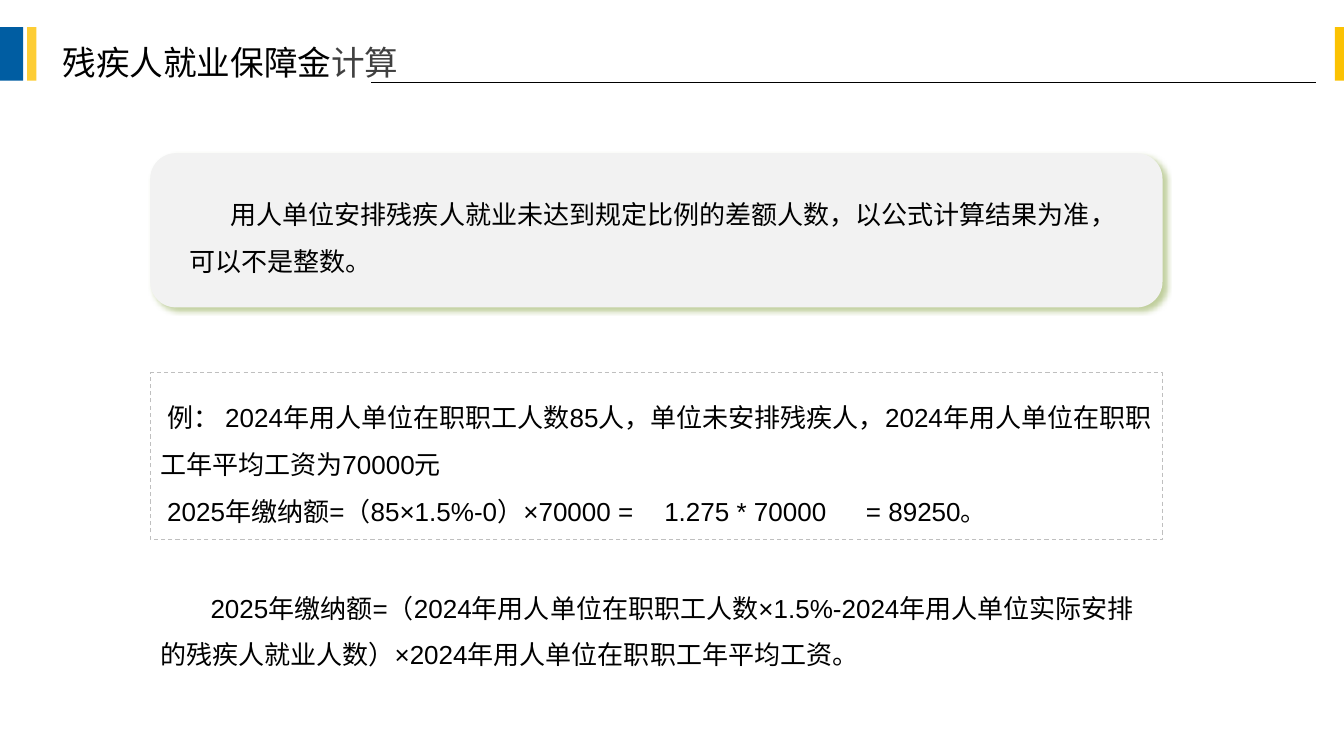
from lxml.etree import SubElement
from pptx import Presentation
from pptx.dml.color import RGBColor
from pptx.enum.dml import MSO_LINE
from pptx.enum.shapes import MSO_CONNECTOR, MSO_SHAPE
from pptx.enum.text import MSO_ANCHOR, MSO_AUTO_SIZE, PP_ALIGN
from pptx.oxml.ns import qn
from pptx.util import Inches, Pt

WIDTH, HEIGHT = 13.33, 7.5
COLUMN_LEFT, COLUMN_WIDTH = 1.49, 10.04
BODY_SIZE = 18.6


def color(hex_text):
    """Turn a hex string into a colour."""
    return RGBColor.from_string(hex_text)


def add_panel(slide, kind, box, fill=None):
    """Add a preset shape without outline or shadow."""
    shape = slide.shapes.add_shape(kind, *map(Inches, box))
    shape.shadow.inherit = False
    shape.line.fill.background()
    if fill:
        shape.fill.solid()
        shape.fill.fore_color.rgb = color(fill)
    else:
        shape.fill.background()
    return shape


def add_run(paragraph, text, size, hex_text="000000"):
    """Append one formatted run."""
    run = paragraph.add_run()
    run.text = text
    run.font.name = "Arial"
    run.font.size = Pt(size)
    run.font.color.rgb = color(hex_text)


def write_body(shape, texts, indent, anchor=MSO_ANCHOR.TOP):
    """Write paragraphs with a first-line indent at one and a half spacing."""
    frame = shape.text_frame
    frame.word_wrap = True
    frame.vertical_anchor = anchor
    for index, text in enumerate(texts):
        paragraph = frame.add_paragraph() if index else frame.paragraphs[0]
        paragraph.alignment = PP_ALIGN.LEFT
        paragraph.line_spacing = 1.5
        properties = paragraph._p.get_or_add_pPr()
        properties.set("marL", "0")
        properties.set("indent", str(Inches(indent)))
        add_run(paragraph, text, BODY_SIZE)


def add_tab_stops(paragraph, positions):
    """Set left tab stops at the given inches."""
    tabs = SubElement(paragraph._p.get_or_add_pPr(), qn("a:tabLst"))
    for position in positions:
        SubElement(tabs, qn("a:tab"), pos=str(Inches(position)), algn="l")


def add_soft_shadow(shape, hex_text):
    """Give a shape a soft shadow to the lower right."""
    effects = shape._element.spPr.find(qn("a:effectLst"))
    shadow = SubElement(effects, qn("a:outerShdw"), blurRad=str(Pt(4)),
                        dist=str(Pt(3)), dir="2700000", algn="tl", rotWithShape="0")
    tint = SubElement(shadow, qn("a:srgbClr"), val=hex_text)
    SubElement(tint, qn("a:alpha"), val="40000")


def add_header(slide, top, height):
    """Place the rule, the edge bars and the title."""
    rule_y = top + height + 0.02
    rule = slide.shapes.add_connector(
        MSO_CONNECTOR.STRAIGHT, *map(Inches, (13.05, rule_y, 3.68, rule_y)))
    rule.line.color.rgb = color("000000")
    rule.line.width = Pt(0.75)
    SubElement(rule._element.spPr, qn("a:effectLst"))
    bars = [(0, 0.23, "005DA2"), (0.27, 0.09, "FDCD35"), (WIDTH - 0.09, 0.09, "FBC203")]
    for left, width, fill in bars:
        add_panel(slide, MSO_SHAPE.RECTANGLE, (left, top, width, height), fill)

    title = slide.shapes.title
    title.left, title.top, title.width, title.height = map(
        Inches, (0.52, top + 0.1, 4.04, 0.5))
    frame = title.text_frame
    frame.word_wrap = True
    frame.auto_size = MSO_AUTO_SIZE.SHAPE_TO_FIT_TEXT
    frame.vertical_anchor = MSO_ANCHOR.TOP
    paragraph = frame.paragraphs[0]
    paragraph.alignment = PP_ALIGN.LEFT
    add_run(paragraph, "残疾人就业保障金", 24)
    add_run(paragraph, "计算", 24, "404040")


def add_rule_card(slide, left, top, width, height):
    """Place the rounded card with the rounding rule."""
    card = add_panel(slide, MSO_SHAPE.FLOWCHART_ALTERNATE_PROCESS,
                     (left, top, width, height), "F2F2F2")
    add_soft_shadow(card, "62870A")
    text_box = slide.shapes.add_textbox(
        *map(Inches, (left + 0.29, top + 0.25, width - 0.52, 1.04)))
    write_body(text_box, ["用人单位安排残疾人就业未达到规定比例的差额人数，以公式计算结果为准，可以不是整数。"], 0.41)


def add_example(slide, left, top, width, height):
    """Place the dashed box with the worked example."""
    example = add_panel(slide, MSO_SHAPE.RECTANGLE, (left, top, width, height))
    example.line.color.rgb = color("BFBFBF")
    example.line.width = Pt(0.75)
    example.line.dash_style = MSO_LINE.DASH
    write_body(example, [
        "例： 2024年用人单位在职职工人数85人，单位未安排残疾人，2024年用人单位在职职工年平均工资为70000元",
        "2025年缴纳额=（85×1.5%-0）×70000 =\t1.275 * 70000\t= 89250。",
    ], 0.07, MSO_ANCHOR.MIDDLE)
    add_tab_stops(example.text_frame.paragraphs[1], (5.28, 7.03))


def add_formula(slide, left, top, width, height):
    """Place the general formula."""
    text_box = slide.shapes.add_textbox(*map(Inches, (left, top, width, height)))
    write_body(text_box, [
        "2025年缴纳额=（2024年用人单位在职职工人数×1.5%-2024年用人单位实际安排的残疾人就业人数）×2024年用人单位在职职工年平均工资。",
    ], 0.5)


def main():
    """Build and save the slide."""
    presentation = Presentation()
    presentation.slide_width = Inches(WIDTH)
    presentation.slide_height = Inches(HEIGHT)
    slide = presentation.slides.add_slide(presentation.slide_layouts[5])
    add_header(slide, 0.27, 0.53)
    sections = [(add_rule_card, 1.52, 1.53), (add_example, 3.7, 1.65), (add_formula, 5.67, 1.04)]
    for add_section, top, height in sections:
        add_section(slide, COLUMN_LEFT, top, COLUMN_WIDTH, height)
    presentation.save("out.pptx")


if __name__ == "__main__":
    main()
